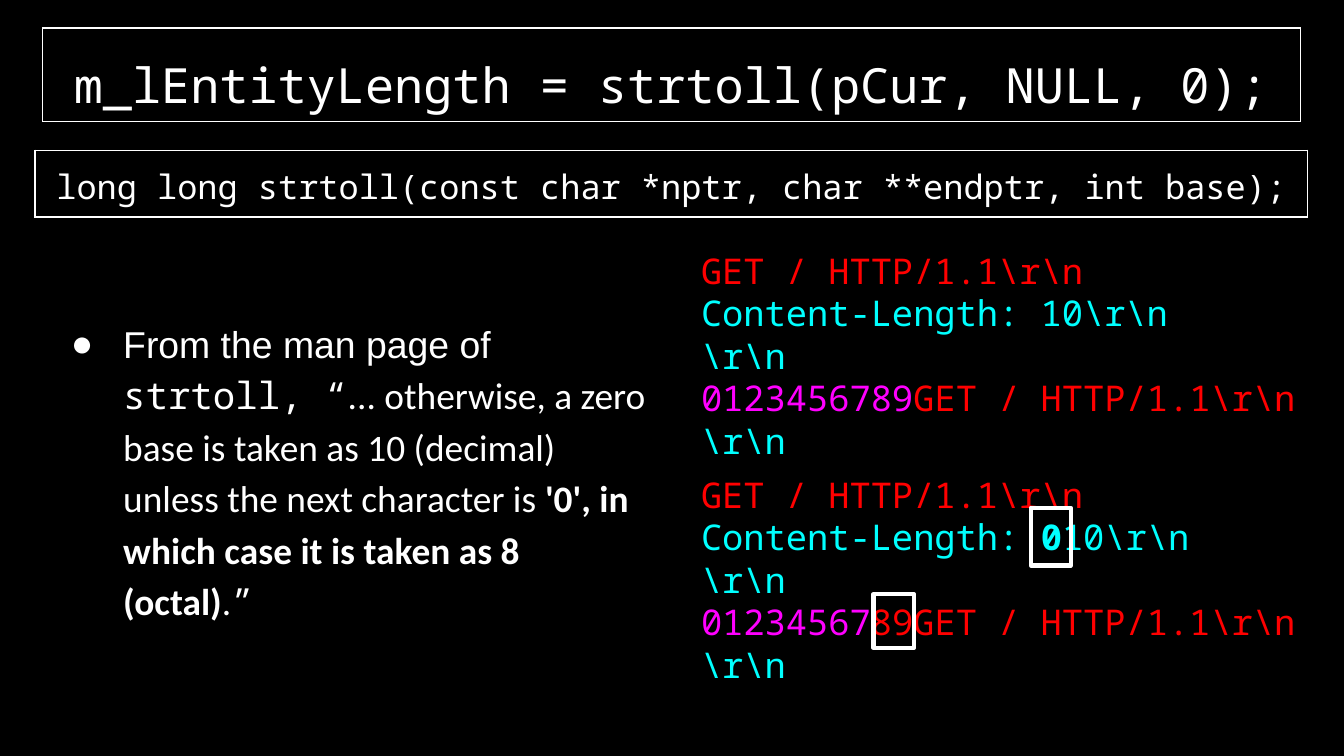
from lxml.etree import SubElement
from pptx import Presentation
from pptx.dml.color import RGBColor
from pptx.enum.shapes import MSO_SHAPE as Shape
from pptx.enum.text import PP_ALIGN as Align
from pptx.oxml.ns import qn
from pptx.util import Cm, Pt

COLORS = {
    "background": "000000",
    "text": "FFFFFF",
    "request": "FF0000",
    "header": "00FFFF",
    "body": "FF00FF",
}
MONO = "Noto Sans Mono"
INSET = Cm(0.25)


def rgb(name):
    return RGBColor.from_string(COLORS[name])


def add_run(paragraph, words, size, color="text", font=MONO, bold=False):
    run = paragraph.add_run()
    run.text = words
    run.font.size = Pt(size)
    run.font.name = font
    run.font.bold = bold
    run.font.color.rgb = rgb(color)


def set_insets(holder):
    holder.margin_left = holder.margin_right = INSET
    holder.margin_top = holder.margin_bottom = INSET


def add_text_box(slide, left, top, width, height):
    frame = slide.shapes.add_textbox(Cm(left), Cm(top), Cm(width), Cm(height)).text_frame
    frame.word_wrap = True
    set_insets(frame)
    return frame


def add_bullet(paragraph, mark):
    props = paragraph._p.get_or_add_pPr()
    props.set("marL", str(Cm(1.27)))
    props.set("indent", str(Cm(-0.99)))
    color = SubElement(props, qn("a:buClr"))
    SubElement(color, qn("a:srgbClr"), val=COLORS["text"])
    SubElement(props, qn("a:buFont"), typeface="Arial")
    SubElement(props, qn("a:buChar"), char=mark)


def add_quote(slide):
    quote = add_text_box(slide, 0.81, 5.69, 11.84, 7.04).paragraphs[0]
    quote.line_spacing = 1.15
    add_bullet(quote, "●")
    for words, font, bold in [
        ("From the man page of ", "Arial", False),
        ("strtoll, “", MONO, False),
        ("... otherwise, a zero base is taken as 10 (decimal) "
         "unless the next character is ", "Calibri", False),
        ("'0', in which case it is taken as 8 (octal)", "Calibri", True),
        (".", "Calibri", False),
        ("”", MONO, False),
    ]:
        add_run(quote, words, 20, font=font, bold=bold)


def add_request(slide, top, length_runs, body, smuggled):
    frame = add_text_box(slide, 13, top, 11.84, 2.72)
    request_line = "GET / HTTP/1.1\\r\\n"
    line_end = ("\\r\\n", "header", False)
    lines = [
        [(request_line, "request", False)],
        [(words, "header", bold) for words, bold in length_runs],
        [line_end],
        [(body, "body", False), (smuggled + request_line, "request", False)],
        [line_end],
    ]
    for index, line in enumerate(lines):
        paragraph = frame.add_paragraph() if index else frame.paragraphs[0]
        for words, color, bold in line:
            add_run(paragraph, words, 19, color, bold=bold)


def add_code_table(slide, left, top, width, height, code, size):
    table = slide.shapes.add_table(
        1, 1, Cm(left), Cm(top), Cm(width), Cm(height)).table
    table.first_row = table.horz_banding = False
    cell = table.cell(0, 0)
    set_insets(cell)
    props = cell._tc.get_or_add_tcPr()
    for side in ("lnL", "lnR", "lnT", "lnB"):
        border = SubElement(props, qn(f"a:{side}"), w=str(Pt(0.75)))
        fill = SubElement(border, qn("a:solidFill"))
        SubElement(fill, qn("a:srgbClr"), val=COLORS["text"])
    cell.fill.background()
    paragraph = cell.text_frame.paragraphs[0]
    paragraph.alignment = Align.CENTER
    add_run(paragraph, code, size)
    return paragraph


def add_highlight(slide, left, top, width, height):
    frame = slide.shapes.add_shape(
        Shape.RECTANGLE, Cm(left), Cm(top), Cm(width), Cm(height))
    frame.shadow.inherit = False
    frame.fill.background()
    frame.line.color.rgb = rgb("text")
    frame.line.width = Pt(2.25)


def main():
    deck = Presentation()
    deck.slide_width, deck.slide_height = Cm(25.4), Cm(14.29)
    slide = deck.slides.add_slide(deck.slide_layouts[6])
    slide.background.fill.solid()
    slide.background.fill.fore_color.rgb = rgb("background")

    add_quote(slide)
    add_request(slide, 8.69,
                [("Content-Length: ", False), ("0", True), ("10\\r\\n", False)],
                "01234567", "89")

    call = add_code_table(slide, 0.81, 0.53, 23.77, 1.45,
                          "m_lEntityLength = strtoll(pCur, NULL, 0);", 26)
    call.line_spacing = 1.15
    call.space_after = Pt(12)
    add_code_table(slide, 0.66, 2.84, 24.05, 1.07,
                   "long long strtoll(const char *nptr, char **endptr, int base);", 18)

    add_request(slide, 4.45, [("Content-Length: 10\\r\\n", False)], "0123456789", "")

    add_highlight(slide, 16.51, 11.23, 0.76, 1.02)
    add_highlight(slide, 19.48, 9.6, 0.76, 1.09)
    deck.save("out.pptx")


if __name__ == "__main__":
    main()
